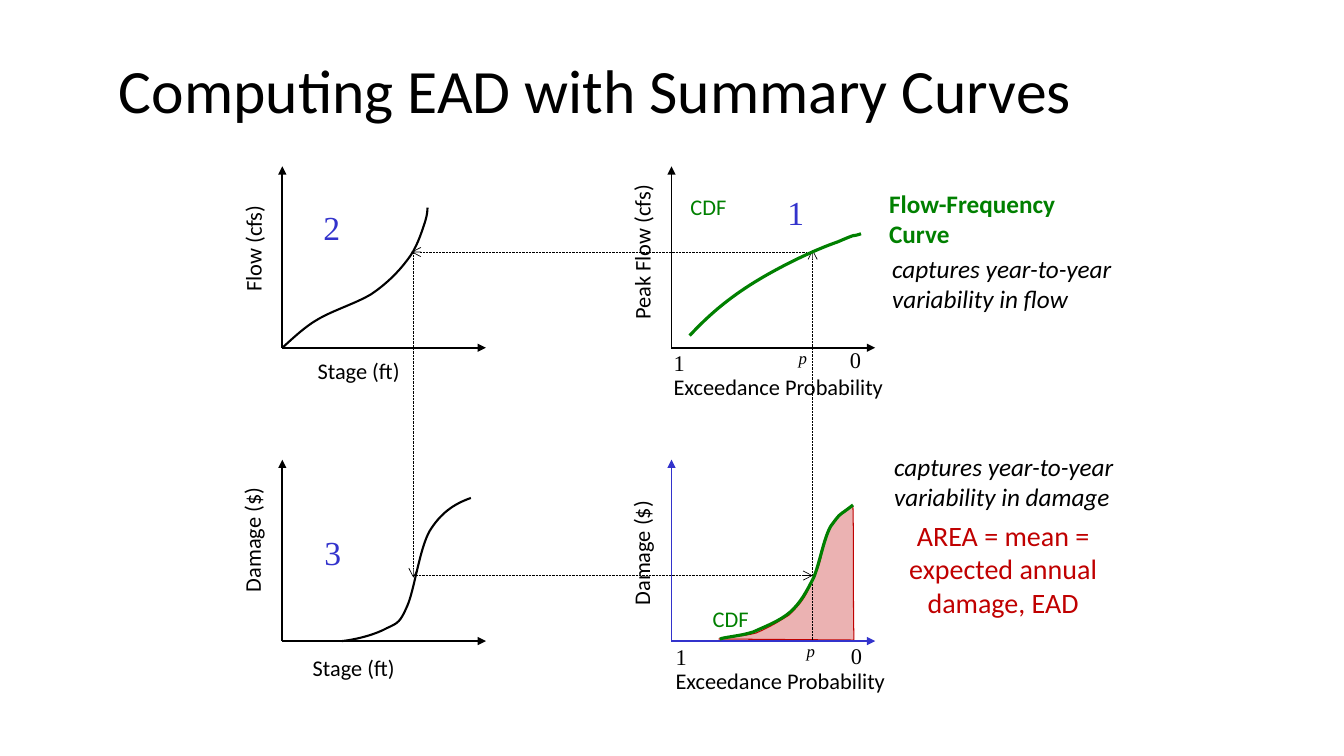
from lxml import etree
from pptx import Presentation
from pptx.dml.color import RGBColor
from pptx.enum.dml import MSO_LINE
from pptx.enum.shapes import MSO_CONNECTOR
from pptx.enum.text import MSO_ANCHOR, MSO_AUTO_SIZE, PP_ALIGN
from pptx.oxml.ns import qn
from pptx.util import Inches, Pt

STRAIGHT = MSO_CONNECTOR.STRAIGHT
DOTTED = MSO_LINE.ROUND_DOT
LEFT, CENTER = PP_ALIGN.LEFT, PP_ALIGN.CENTER
TOP, MIDDLE = MSO_ANCHOR.TOP, MSO_ANCHOR.MIDDLE
GROW, FIXED = MSO_AUTO_SIZE.SHAPE_TO_FIT_TEXT, MSO_AUTO_SIZE.NONE

BLACK = RGBColor(0x00, 0x00, 0x00)
BLUE = RGBColor(0x33, 0x33, 0xCC)
GREEN = RGBColor(0x00, 0x80, 0x00)
RED = RGBColor(0xC0, 0x00, 0x00)
SANS, SERIF = "Calibri", "Times New Roman"

TITLE = "Computing EAD with Summary Curves"
COLUMNS = {"stage": 2.8, "probability": 6.66}
ROWS = {"flow": 3.45, "damage": 6.36}
AXIS_WIDTH, AXIS_HEIGHT = 2.02, 1.8

FLOW_STAGE = ("stage", "flow")
FLOW_FREQUENCY = ("probability", "flow")
DAMAGE_STAGE = ("stage", "damage")
DAMAGE_FREQUENCY = ("probability", "damage")
AXIS_COLORS = {DAMAGE_FREQUENCY: BLUE, FLOW_FREQUENCY: BLACK,
               FLOW_STAGE: BLACK, DAMAGE_STAGE: BLACK}

AREA = [(0.47, 0.02), (0.59, 0.05), (0.69, 0.04), (0.84, 0.08), (0.98, 0.14), (1.06, 0.19),
        (1.17, 0.26), (1.27, 0.36), (1.33, 0.43), (1.39, 0.58), (1.44, 0.68), (1.47, 0.76),
        (1.49, 0.86), (1.52, 0.99), (1.54, 1.1), (1.62, 1.2), (1.69, 1.27), (1.74, 1.3),
        (1.8, 1.34), (1.81, 0.91), (1.8, 0.44), (1.81, 0.01)]
CURVES = [
    (FLOW_FREQUENCY, GREEN, 2.25,
     [(0.18, 0.12), (0.33, 0.28), (0.49, 0.43), (0.73, 0.59), (0.97, 0.75),
      (1.36, 0.95), (1.65, 1.05), (1.88, 1.15), (1.76, 1.09), (1.88, 1.13)]),
    (FLOW_STAGE, BLACK, 1.5,
     [(1.44, 1.39), (1.44, 1.37), (1.44, 1.32), (1.41, 1.23), (1.38, 1.14), (1.33, 0.98),
      (1.24, 0.87), (1.15, 0.75), (1.03, 0.63), (0.88, 0.53), (0.73, 0.44), (0.5, 0.37),
      (0.35, 0.28), (0.21, 0.2), (0.07, 0.06), (0, 0)]),
    (DAMAGE_STAGE, BLACK, 1.5,
     [(0.59, 0), (0.76, 0.02), (0.93, 0.07), (1.04, 0.13), (1.15, 0.18), (1.17, 0.19),
      (1.24, 0.35), (1.31, 0.51), (1.36, 0.91), (1.46, 1.09), (1.57, 1.27), (1.7, 1.36),
      (1.87, 1.42)]),
    (DAMAGE_FREQUENCY, GREEN, 2.25,
     [(0.48, 0.02), (0.53, 0.04), (0.69, 0.05), (0.81, 0.09), (0.92, 0.14), (1.08, 0.2),
      (1.18, 0.29), (1.28, 0.38), (1.34, 0.49), (1.41, 0.63), (1.47, 0.77), (1.51, 1.02),
      (1.58, 1.14), (1.69, 1.29), (1.65, 1.23), (1.8, 1.35)]),
]
GUIDES = [((8.06, 6.35), (8.06, 2.48)), ((8, 2.5), (4.08, 2.5)),
          ((4.1, 2.5), (4.1, 5.73)), ((4.11, 5.71), (8.06, 5.71))]

AXIS_NAME = dict(insets=(0.11, 0.06), wrap=False)
VERTICAL = dict(AXIS_NAME, rotation=270)
TICK = dict(insets=(0.14, 0.07), wrap=False)
NUMBER = dict(TICK, font=SERIF)
PROBABILITY = dict(insets=(0.14, 0.07), font=SERIF, size=12, italic=True)
STEP = dict(font=SERIF, size=24, color=BLUE)
NOTE = dict(size=18, italic=True)
CDF = dict(color=GREEN)

LABELS = [
    (DAMAGE_FREQUENCY, "AREA = mean = expected annual damage, EAD",
     (2.11, 1.27, 2.36, 1.11), dict(size=20, color=RED, align=CENTER)),
    (FLOW_FREQUENCY, "Peak Flow (cfs)", (-1.09, 1.15, 1.58, 0.38), VERTICAL),
    (FLOW_FREQUENCY, "Exceedance Probability", (-0.12, -0.18, 2.38, 0.41), TICK),
    (FLOW_FREQUENCY, "1", (-0.12, 0.06, 0.39, 0.41), NUMBER),
    (FLOW_FREQUENCY, "0", (1.63, 0.09, 0.39, 0.41), NUMBER),
    (DAMAGE_FREQUENCY, "Exceedance Probability", (-0.1, -0.19, 2.38, 0.41), TICK),
    (DAMAGE_FREQUENCY, "1", (-0.1, 0.05, 0.39, 0.41), NUMBER),
    (DAMAGE_FREQUENCY, "0", (1.64, 0.06, 0.39, 0.41), NUMBER),
    (FLOW_STAGE, "Stage (ft)", (0.24, -0.03, 1.05, 0.38), AXIS_NAME),
    (FLOW_STAGE, "Flow (cfs)", (-0.84, 1.18, 1.09, 0.38), dict(VERTICAL, rotation=270.2)),
    (DAMAGE_STAGE, "Stage (ft)", (0.19, -0.07, 1.05, 0.38), dict(AXIS_NAME, rotation=359.5)),
    (DAMAGE_STAGE, "Damage ($)", (-0.94, 1.2, 1.27, 0.38), VERTICAL),
    (DAMAGE_FREQUENCY, "Damage ($)", (-0.94, 1.07, 1.27, 0.38), VERTICAL),
    (DAMAGE_FREQUENCY, "p", (1.2, 0.07, 0.36, 0.34), PROBABILITY),
    (FLOW_FREQUENCY, "p", (1.12, 0.07, 0.36, 0.34), PROBABILITY),
    (FLOW_FREQUENCY, "Flow-Frequency Curve", (2.06, 1.63, 2.12, 0.71),
     dict(size=18, color=GREEN, bold=True)),
    (FLOW_FREQUENCY, "captures year-to-year variability in flow", (2.09, 0.99, 2.38, 0.71), NOTE),
    (DAMAGE_FREQUENCY, "captures year-to-year variability in damage",
     (2.11, 1.93, 2.38, 0.71), NOTE),
    (FLOW_FREQUENCY, "CDF", (0.09, 1.58, 0.68, 0.37), CDF),
    (DAMAGE_FREQUENCY, "CDF", (0.31, 0.41, 0.68, 0.37), CDF),
    (FLOW_FREQUENCY, "1", (1.05, 1.6, 0.48, 0.52), STEP),
    (FLOW_STAGE, "2", (0.31, 1.45, 0.48, 0.52), STEP),
    (DAMAGE_STAGE, "3", (0.32, 1.13, 0.4, 0.5), STEP),
]


def position(plot, right, up):
    column, row = plot
    return COLUMNS[column] + right, ROWS[row] - up


def write(shape, text, font=SANS, size=16, color=BLACK, bold=False, italic=False, align=LEFT,
          anchor=TOP, insets=(0.1, 0.05), wrap=True, rotation=0, fit=GROW):
    shape.rotation = rotation
    frame = shape.text_frame
    frame.word_wrap = wrap
    frame.auto_size = fit
    frame.vertical_anchor = anchor
    frame.margin_left = frame.margin_right = Inches(insets[0])
    frame.margin_top = frame.margin_bottom = Inches(insets[1])
    paragraph = frame.paragraphs[0]
    paragraph.alignment = align
    run = paragraph.add_run()
    run.text = text
    run.font.name, run.font.size = font, Pt(size)
    run.font.bold, run.font.italic = bold, italic
    run.font.color.rgb = color


def add_arrow(slide, start, end, color, width, head, dash=None):
    arrow = slide.shapes.add_connector(STRAIGHT, *map(Inches, start + end))
    arrow.line.color.rgb = color
    arrow.line.width = Pt(width)
    if dash:
        arrow.line.dash_style = dash
    properties = arrow.element.spPr
    etree.SubElement(properties.find(qn("a:ln")), qn("a:tailEnd"), type=head)
    etree.SubElement(properties, qn("a:effectLst"))


def bend_segments(shape):
    segments = list(shape.element.spPr.iter(qn("a:lnTo")))
    for first, second, third in zip(segments[::3], segments[1::3], segments[2::3]):
        curve = etree.Element(qn("a:cubicBezTo"))
        first.addprevious(curve)
        for segment in (first, second, third):
            curve.append(segment[0])
            segment.getparent().remove(segment)


def add_curve(slide, plot, points, color, width, closed=False):
    vertices = [tuple(map(Inches, position(plot, *point))) for point in points]
    builder = slide.shapes.build_freeform(*vertices[0])
    builder.add_line_segments(vertices[1:], close=closed)
    shape = builder.convert_to_shape()
    bend_segments(shape)
    shape.shadow.inherit = False
    shape.line.color.rgb = color
    shape.line.width = Pt(width)
    if closed:
        shape.fill.solid()
        shape.fill.fore_color.rgb = color
        fill_color = shape.element.spPr.find(qn("a:solidFill"))[0]
        etree.SubElement(fill_color, qn("a:alpha"), val="30000")
    else:
        shape.fill.background()


def main():
    presentation = Presentation()
    presentation.slide_width, presentation.slide_height = Inches(13.33), Inches(7.5)
    slide = presentation.slides.add_slide(presentation.slide_layouts[5])

    title = slide.shapes.title
    title.left, title.top, title.width, title.height = map(Inches, (1.08, 0.26, 10.92, 1.25))
    write(title, TITLE, size=44, anchor=MIDDLE, fit=FIXED)

    add_curve(slide, DAMAGE_FREQUENCY, AREA, RED, 0.75, closed=True)
    for plot, color in AXIS_COLORS.items():
        for tip in ((0, AXIS_HEIGHT), (AXIS_WIDTH, 0)):
            add_arrow(slide, position(plot, 0, 0), position(plot, *tip), color, 1.25, "triangle")
    for plot, text, (right, up, width, height), style in LABELS:
        box = slide.shapes.add_textbox(*map(Inches, position(plot, right, up) + (width, height)))
        write(box, text, **style)
    for start, end in GUIDES:
        add_arrow(slide, start, end, BLACK, 0.5, "arrow", DOTTED)
    for plot, color, width, points in CURVES:
        add_curve(slide, plot, points, color, width)

    presentation.save("out.pptx")


if __name__ == "__main__":
    main()
